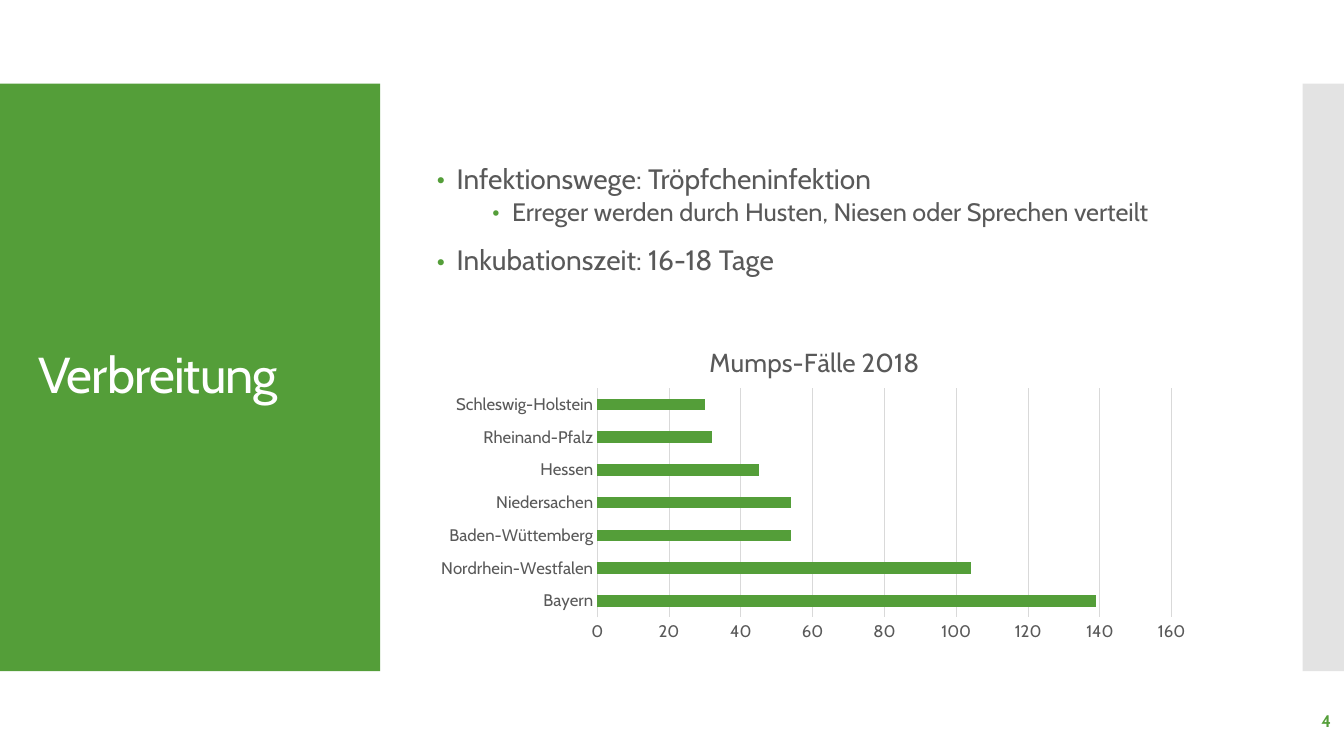
from lxml import etree
from pptx import Presentation
from pptx.chart.data import CategoryChartData
from pptx.dml.color import RGBColor
from pptx.enum.chart import XL_CHART_TYPE, XL_TICK_MARK
from pptx.enum.shapes import MSO_SHAPE
from pptx.enum.text import MSO_ANCHOR, MSO_AUTO_SIZE, PP_ALIGN
from pptx.oxml import parse_xml
from pptx.oxml.ns import nsdecls, qn
from pptx.util import Inches, Pt

BAR = XL_CHART_TYPE.BAR_CLUSTERED
NO_TICK = XL_TICK_MARK.NONE
RECT = MSO_SHAPE.RECTANGLE
MIDDLE = MSO_ANCHOR.MIDDLE
NO_FIT = MSO_AUTO_SIZE.NONE
LEFT, RIGHT = PP_ALIGN.LEFT, PP_ALIGN.RIGHT

GREEN = RGBColor(0x54, 0x9E, 0x39)
PALE = RGBColor(0xC8, 0xC8, 0xC8)
GRID = RGBColor(0xD9, 0xD9, 0xD9)
TEXT = RGBColor(0x59, 0x59, 0x59)
WHITE = RGBColor(0xFF, 0xFF, 0xFF)
FONT = "Cabin"

# Text, level
POINTS = [
    ("Infektionswege: Tröpfcheninfektion", 0),
    ("Erreger werden durch Husten, Niesen oder Sprechen verteilt", 1),
    ("Inkubationszeit: 16-18 Tage\v", 0),
]
# Size, left margin, space before, space after for each level
LEVELS = [(20, 0.2, 12, 0), (18, 0.75, 2.5, 2.5)]
CASES = {
    "Bayern": 139,
    "Nordrhein-Westfalen": 104,
    "Baden-Wüttemberg": 54,
    "Niedersachen": 54,
    "Hessen": 45,
    "Rheinand-Pfalz": 32,
    "Schleswig-Holstein": 30,
}


def style(font, size, color, bold=False):
    font.name = FONT
    font.size = Pt(size)
    font.bold = bold
    font.color.rgb = color


def place(shape, box):
    shape.left, shape.top, shape.width, shape.height = map(Inches, box)


def add_panel(slide, box, color, alpha=None):
    panel = slide.shapes.add_shape(RECT, *map(Inches, box))
    panel.shadow.inherit = False
    panel.fill.solid()
    panel.fill.fore_color.rgb = color
    panel.line.fill.background()
    if alpha:
        fill = panel.fill._xPr.find(qn("a:solidFill"))
        etree.SubElement(fill[0], qn("a:alpha")).set("val", str(alpha * 1000))


def add_title(slide, box):
    title = slide.shapes.title
    place(title, box)
    frame = title.text_frame
    frame.text = "Verbreitung"
    frame.auto_size = NO_FIT
    frame.vertical_anchor = MIDDLE
    para = frame.paragraphs[0]
    para.alignment = LEFT
    para.line_spacing = 0.9
    run = para.runs[0]
    style(run.font, 36, WHITE)
    run.font._element.set("spc", "-60")


def add_bullet(para, margin):
    props = para._p.get_or_add_pPr()
    props.set("marL", str(Inches(margin)))
    props.set("indent", str(Inches(-0.2)))
    color = etree.SubElement(props, qn("a:buClr"))
    etree.SubElement(color, qn("a:srgbClr")).set("val", str(GREEN))
    etree.SubElement(props, qn("a:buFont")).set("typeface", FONT)
    etree.SubElement(props, qn("a:buChar")).set("char", "•")


def add_list(slide, box):
    body = slide.placeholders[1]
    place(body, box)
    frame = body.text_frame
    frame.auto_size = NO_FIT
    frame.vertical_anchor = MIDDLE
    for i, (text, level) in enumerate(POINTS):
        para = frame.add_paragraph() if i else frame.paragraphs[0]
        size, margin, before, after = LEVELS[level]
        para.text = text
        para.level = level
        para.line_spacing = 0.9
        para.space_before = Pt(before)
        para.space_after = Pt(after)
        add_bullet(para, margin)
        style(para.font, size, TEXT)
        for run in para.runs:
            style(run.font, size, TEXT)


def add_chart(slide, box):
    data = CategoryChartData()
    data.categories = list(CASES)
    data.add_series("Series 1", list(CASES.values()))
    chart = slide.shapes.add_chart(BAR, *map(Inches, box), data).chart
    style(chart.font, 10, TEXT)
    chart.has_legend = False

    # Heading
    chart.has_title = True
    frame = chart.chart_title.text_frame
    frame.text = "Mumps-Fälle 2018"
    style(frame.paragraphs[0].runs[0].font, 18.6, TEXT)

    # Bars
    plot = chart.plots[0]
    plot.gap_width = 182
    plot.vary_by_categories = False
    fill = plot.series[0].format.fill
    fill.solid()
    fill.fore_color.rgb = GREEN

    # Axes
    cat, val = chart.category_axis, chart.value_axis
    for axis in (cat, val):
        axis.major_tick_mark = axis.minor_tick_mark = NO_TICK
        style(axis.tick_labels.font, 12, TEXT)
    val.minimum_scale, val.maximum_scale, val.major_unit = 0, 160, 20
    val.has_major_gridlines = True
    val.format.line.fill.background()
    for line in (cat.format.line, val.major_gridlines.format.line):
        line.color.rgb = GRID
        line.width = Pt(0.75)

    # Inner plot area, as shares of the chart
    area = chart._chartSpace.chart.plotArea
    for old in area.findall(qn("c:layout")):
        area.remove(old)
    shares = {"x": 0.22, "y": 0.19, "w": 0.74, "h": 0.72}
    modes = "".join(f'<c:{k}Mode val="edge"/>' for k in "xy")
    sizes = "".join(f'<c:{k} val="{v}"/>' for k, v in shares.items())
    area.insert(0, parse_xml(
        f'<c:layout {nsdecls("c")}><c:manualLayout>'
        f'<c:layoutTarget val="inner"/>{modes}{sizes}'
        '</c:manualLayout></c:layout>'))


def add_number(slide, box):
    frame = slide.shapes.add_textbox(*map(Inches, box)).text_frame
    frame.word_wrap = True
    frame.vertical_anchor = MIDDLE
    frame.text = "4"
    para = frame.paragraphs[0]
    para.alignment = RIGHT
    style(para.runs[0].font, 12, GREEN, True)


def add_frame(slide):
    add_panel(slide, (0, 0.83, 3.77, 5.83), GREEN)
    add_panel(slide, (12.92, 0.83, 0.42, 5.83), PALE, 50)
    # Panels lie behind the placeholders
    tree = slide.shapes._spTree
    for i, panel in enumerate(list(slide.shapes)[-2:]):
        tree.insert(2 + i, panel._element)


def main():
    deck = Presentation()
    deck.slide_width, deck.slide_height = Inches(13.33), Inches(7.5)
    slide = deck.slides.add_slide(deck.slide_layouts[1])
    add_frame(slide)
    add_title(slide, (0.28, 1.23, 3.22, 5.03))
    add_list(slide, (4.23, 0.94, 8, 2.81))
    add_number(slide, (11.63, 6.95, 1.67, 0.4))
    add_chart(slide, (4.23, 3.25, 7.7, 3.16))
    deck.save("out.pptx")


if __name__ == "__main__":
    main()
